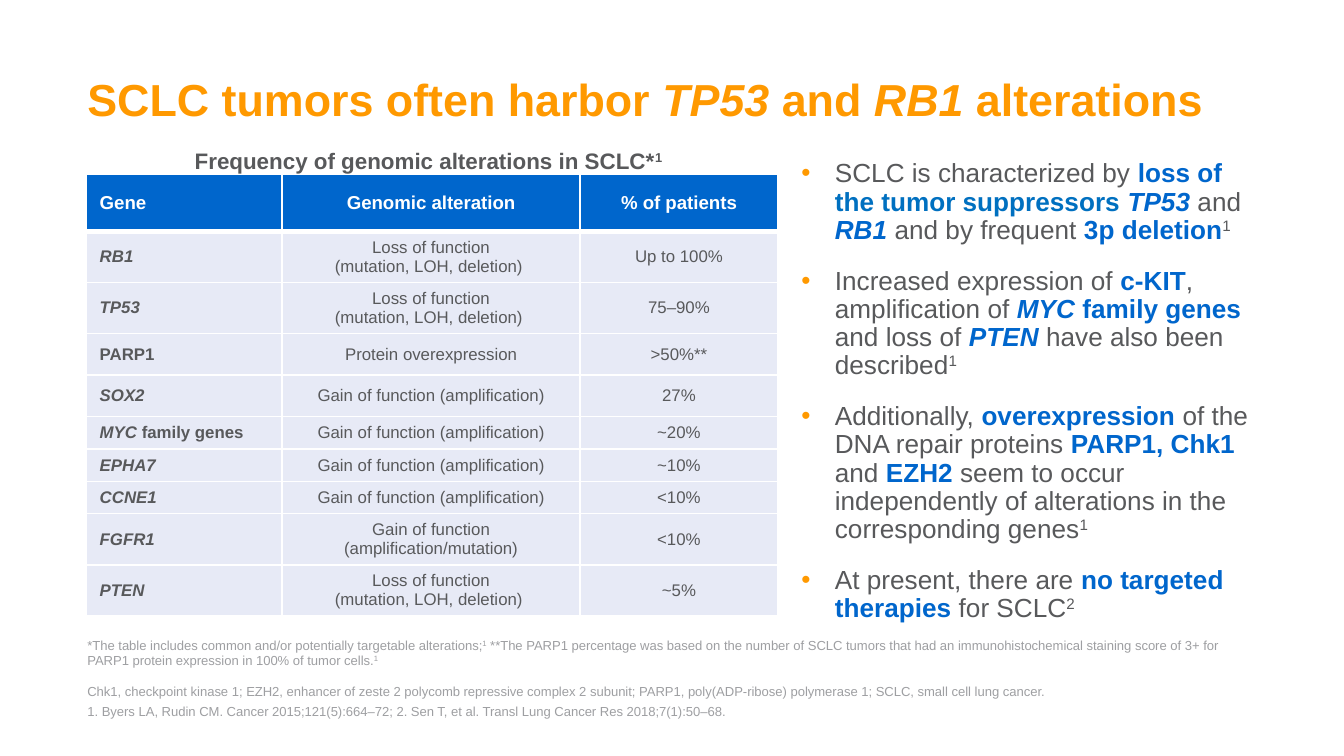
from lxml import etree
from pptx import Presentation
from pptx import util as u
from pptx.dml.color import RGBColor
from pptx.enum import text as t
from pptx.oxml import ns

WIDTH = u.Inches(10)
HEIGHT = u.Emu(WIDTH * 9 // 16)
ORANGE = RGBColor(0xFF, 0x99, 0x00)
BLUE = RGBColor(0x00, 0x66, 0xCC)
SOFT_BLUE = RGBColor(0x00, 0x70, 0xC0)
DARK = RGBColor(0x58, 0x59, 0x5B)
GREY = RGBColor(0x9E, 0x9F, 0xA2)
PALE = RGBColor(0xE7, 0xEA, 0xF6)
WHITE = RGBColor(0xFF, 0xFF, 0xFF)
LEFT, CENTER = t.PP_ALIGN.LEFT, t.PP_ALIGN.CENTER

STYLES = {
    "plain": {},
    "bold": {"bold": True},
    "italic": {"bold": True, "italic": True},
    "key": {"bold": True, "color": BLUE},
    "soft": {"bold": True, "color": SOFT_BLUE},
    "gene": {"bold": True, "italic": True, "color": BLUE},
    "super": {"raised": True},
    "bold super": {"bold": True, "raised": True},
}

TITLE = [("SCLC tumors often harbor ", "bold"), ("TP53 ", "italic"), ("and ", "bold"),
         ("RB1", "italic"), (" alterations", "bold")]
HEADING = [("Frequency of genomic alterations in SCLC*", "bold"), ("1", "bold super")]
POINTS = [
    [("SCLC is characterized by ", "plain"), ("loss of ", "key"),
     ("the tumor suppressors ", "soft"), ("TP53 ", "gene"), ("and ", "plain"),
     ("RB1", "gene"), (" and by frequent ", "plain"), ("3p deletion", "key"), ("1", "super")],
    [("Increased expression of ", "plain"), ("c-KIT", "key"), (", amplification of ", "plain"),
     ("MYC", "gene"), (" family genes", "key"), (" and loss of ", "plain"), ("PTEN", "gene"),
     (" have also been described", "plain"), ("1", "super")],
    [("Additionally, ", "plain"), ("overexpression", "key"),
     (" of the DNA repair proteins ", "plain"), ("PARP1, Chk1 ", "key"), ("and ", "plain"),
     ("EZH2 ", "key"),
     ("seem to occur independently of alterations in the corresponding genes", "plain"),
     ("1", "super")],
    [("At present, there are ", "plain"), ("no targeted therapies ", "key"),
     ("for SCLC", "plain"), ("2", "super")],
]
FOOTNOTES = [
    [("*The table includes common and/or potentially targetable alterations;", "plain"),
     ("1", "super"),
     (" **The PARP1 percentage was based on the number of SCLC tumors that had an "
      "immunohistochemical staining score of 3+ for PARP1 protein expression in 100% of "
      "tumor cells.", "plain"), ("1", "super")],
    [("Chk1, checkpoint kinase 1; EZH2, enhancer of zeste 2 polycomb repressive complex 2 "
      "subunit; PARP1, poly(ADP-ribose) polymerase 1; SCLC, small cell lung cancer.", "plain")],
]
CITATION = [("1. Byers LA, Rudin CM. Cancer 2015;121(5):664–72; 2. Sen T, et al. "
             "Transl Lung Cancer Res 2018;7(1):50–68.", "plain")]

LOSS = "Loss of function\n(mutation, LOH, deletion) "
GAIN = "Gain of function (amplification)"
HEADER = ["Gene", "Genomic alteration", "% of patients"]
GENES = [
    ([("RB1", "italic")], LOSS, "Up to 100%"),
    ([("TP53", "italic")], LOSS, "75–90%"),
    ([("PARP1", "bold")], "Protein overexpression", ">50%**"),
    ([("SOX2", "italic")], GAIN, "27%"),
    ([("MYC", "italic"), (" family genes", "bold")], GAIN, "~20%"),
    ([("EPHA7", "italic")], GAIN, "~10%"),
    ([("CCNE1", "italic")], GAIN, "<10%"),
    ([("FGFR1", "italic")], "Gain of function (amplification/mutation)", "<10%"),
    ([("PTEN", "italic")], LOSS, "~5%"),
]
COLUMN_SHARES = [14.55, 22.2, 14.7]
TALL, MEDIUM, SHORT = 6.75, 5.5, 4.27
ROW_SHARES = [7.6] + [TALL] * 2 + [MEDIUM] * 2 + [SHORT] * 3 + [TALL] * 2


def across(percent):
    """Return a share of the slide's width."""
    return u.Emu(int(WIDTH * percent / 100))


def down(percent):
    """Return a share of the slide's height."""
    return u.Emu(int(HEIGHT * percent / 100))


def area(left, top, width, height):
    """Turn four percentages into a position and size."""
    return across(left), down(top), across(width), down(height)


def move(shape, box):
    """Place a shape in the given area."""
    shape.left, shape.top, shape.width, shape.height = box


def add_xml(parent, tag, **attributes):
    """Append a drawing element and return it."""
    return etree.SubElement(parent, ns.qn(tag), attributes)


def write(paragraph, runs, size, color, align=LEFT, line=1.0, before=0, after=0):
    """Fill a paragraph with styled runs."""
    paragraph.alignment, paragraph.line_spacing = align, line
    paragraph.space_before, paragraph.space_after = u.Pt(before), u.Pt(after)
    for words, name in runs:
        style = STYLES[name]
        for index, part in enumerate(words.split("\n")):
            if index:
                paragraph.add_line_break()
            run = paragraph.add_run()
            run.text = part
            font = run.font
            font.name, font.size = "Arial", u.Pt(size)
            font.bold, font.italic = style.get("bold", False), style.get("italic", False)
            font.color.rgb = style.get("color", color)
            if style.get("raised"):
                run._r.get_or_add_rPr().set("baseline", "30000")


def prepare(shape, anchor=t.MSO_ANCHOR.TOP):
    """Give a shape a wrapped text frame without insets."""
    frame = shape.text_frame
    frame.word_wrap, frame.auto_size = True, t.MSO_AUTO_SIZE.NONE
    frame.vertical_anchor = anchor
    frame.margin_left = frame.margin_right = frame.margin_top = frame.margin_bottom = 0
    return frame


def set_bullet(paragraph, indent=0):
    """Set an orange bullet with a hanging indent, or none without an indent."""
    properties = paragraph._p.get_or_add_pPr()
    properties.set("marL", str(int(indent)))
    properties.set("indent", str(-int(indent)))
    if indent:
        add_xml(add_xml(properties, "a:buClr"), "a:srgbClr", val=str(ORANGE))
        add_xml(properties, "a:buFont", typeface="Arial")
        add_xml(properties, "a:buChar", char="•")
    else:
        add_xml(properties, "a:buNone")


def fill_list(frame, items, indent=0, **layout):
    """Write one paragraph for each item."""
    for index, runs in enumerate(items):
        paragraph = frame.add_paragraph() if index else frame.paragraphs[0]
        write(paragraph, runs, **layout)
        set_bullet(paragraph, indent)


def format_cell(cell, runs, fill, bottom, **layout):
    """Write a cell and set its white borders and fill."""
    cell.vertical_anchor = t.MSO_ANCHOR.MIDDLE
    write(cell.text_frame.paragraphs[0], runs, **layout)
    for side, points in (("L", 1), ("R", 1), ("T", 1), ("B", bottom)):
        border = add_xml(cell._tc.get_or_add_tcPr(), f"a:ln{side}", w=str(u.Pt(points)))
        add_xml(add_xml(border, "a:solidFill"), "a:srgbClr", val=str(WHITE))
    cell.fill.solid()
    cell.fill.fore_color.rgb = fill


def add_gene_table(slide, box):
    """Add the table of genomic alterations."""
    table = slide.shapes.add_table(len(ROW_SHARES), len(COLUMN_SHARES), *box).table
    table.horz_banding = False
    for column, share in zip(table.columns, COLUMN_SHARES):
        column.width = across(share)
    for row, share in zip(table.rows, ROW_SHARES):
        row.height = down(share)
    rows = [[[(label, "bold")] for label in HEADER]]
    rows += [[gene, [(change, "plain")], [(rate, "plain")]] for gene, change, rate in GENES]
    for y, row in enumerate(rows):
        look = ({"fill": PALE, "bottom": 1, "size": 9, "color": DARK} if y else
                {"fill": BLUE, "bottom": 3, "size": 10, "color": WHITE})
        for x, runs in enumerate(row):
            format_cell(table.cell(y, x), runs, align=CENTER if x else LEFT, **look)


def main():
    """Build and save the slide."""
    presentation = Presentation()
    presentation.slide_width, presentation.slide_height = WIDTH, HEIGHT
    slide = presentation.slides.add_slide(presentation.slide_layouts[3])
    title, points, footnotes = slide.placeholders

    move(title, area(6.5, 5.33, 90.1, 11.38))
    write(prepare(title, t.MSO_ANCHOR.BOTTOM).paragraphs[0], TITLE, 24, ORANGE, line=0.9)
    move(points, area(59.62, 21.2, 34, 52.44))
    fill_list(prepare(points), POINTS, across(2.5), size=14, color=DARK,
              line=0.9, before=6, after=6)
    move(footnotes, area(6.5, 89.07, 84.7, 3.38))
    fill_list(prepare(footnotes, t.MSO_ANCHOR.BOTTOM), FOOTNOTES, size=7, color=GREY, after=8)
    footnotes.text_frame.paragraphs[-1].space_after = u.Pt(0)

    citation = slide.shapes.add_textbox(*area(6.5, 93.05, 87.2, 3.38))
    write(prepare(citation).paragraphs[0], CITATION, 7, GREY)
    add_gene_table(slide, area(6.42, 23, sum(COLUMN_SHARES), sum(ROW_SHARES)))
    heading = slide.shapes.add_textbox(*area(13.5, 18.31, 37.9, 5.69))
    heading.text_frame.word_wrap = True
    write(heading.text_frame.paragraphs[0], HEADING, 12, DARK, line=1.07, after=8)
    presentation.save("out.pptx")


if __name__ == "__main__":
    main()
